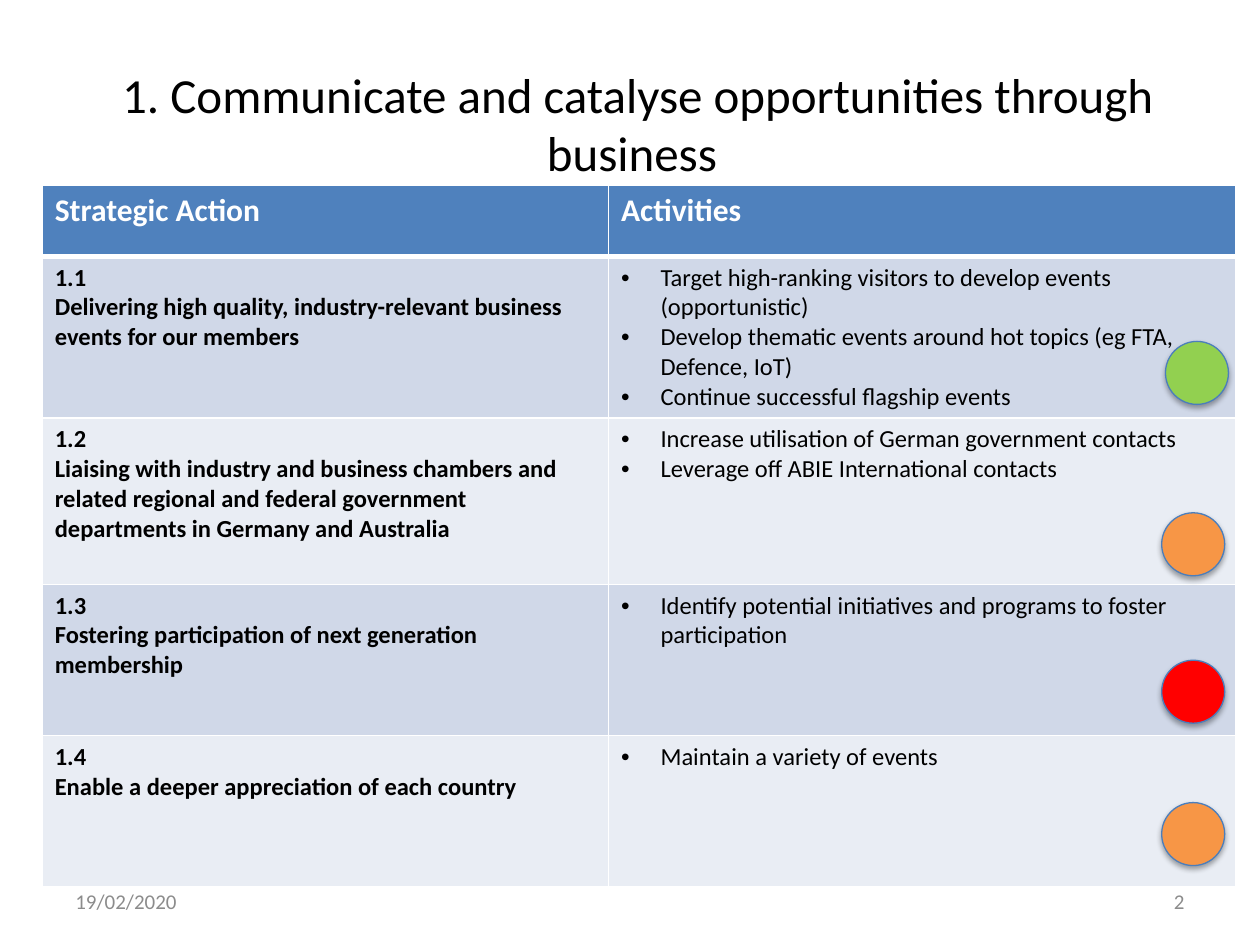
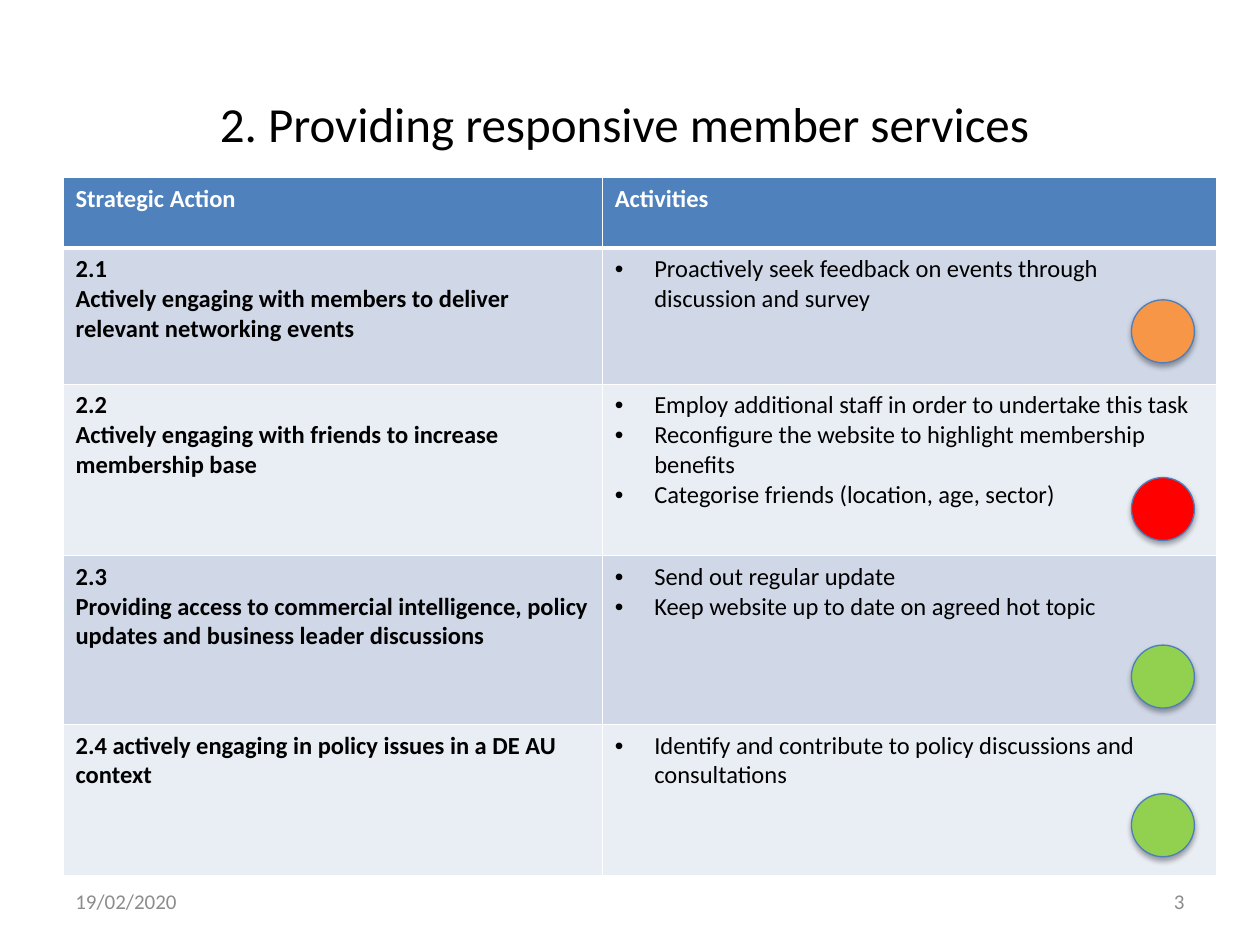
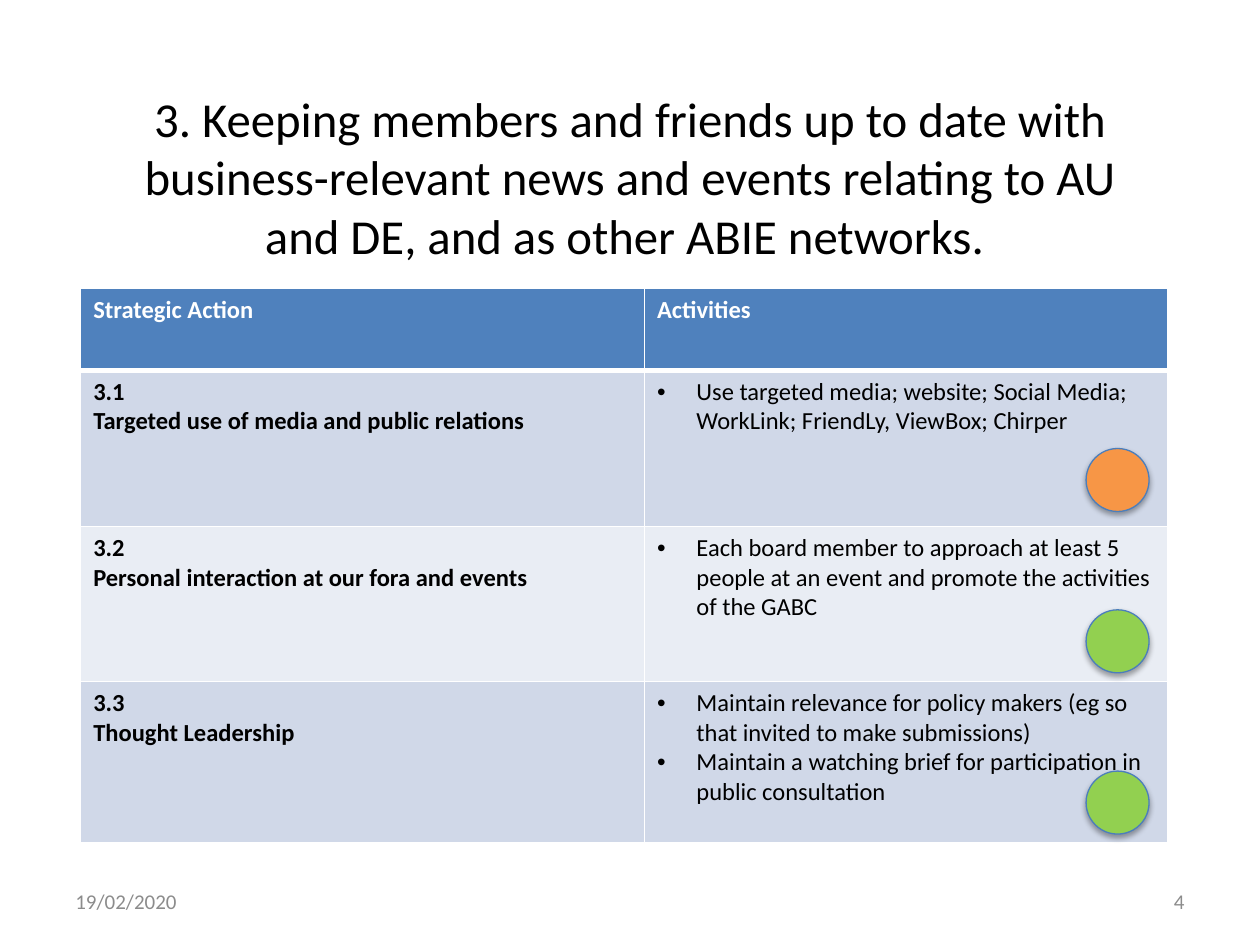
import enum
from dataclasses import dataclass

import pptx
import pptx.dml.color
import pptx.enum.shapes
import pptx.enum.text
import pptx.oxml
import pptx.oxml.ns
import pptx.util

FONT = "Calibri"
BLACK, WHITE, GREY = "000000", "FFFFFF", "8C8C8C"
HEADER_FILL, DOT_LINE = "4F81BD", "4B7EBC"
BANDS = ("D0D8E8", "E9EDF4")
HEADERS = ("Strategic Action", "Activities")
DATE = "19/02/2020"
FIRST_NUMBER = 2
BODY_SIZE = 14
FOOTER_SIZE = 12
DOT_SIZE = 5
INDENT = pptx.util.Pt(22.5)
GRID_COLUMNS, GRID_ROWS = 100, 75
WIDTH, HEIGHT = pptx.util.Inches(10), pptx.util.Inches(7.5)
ALIGN = pptx.enum.text.PP_ALIGN
MIDDLE = pptx.enum.text.MSO_ANCHOR.MIDDLE


class Status(enum.Enum):
    GREEN = "92D050"
    ORANGE = "F79646"
    RED = "FF0000"


@dataclass(frozen=True)
class Box:
    left: float
    top: float
    width: float
    height: float

    def place(self) -> tuple:
        return (grid_x(self.left), grid_y(self.top),
                grid_x(self.width), grid_y(self.height))


@dataclass(frozen=True)
class Action:
    lines: tuple
    activities: tuple
    height: float
    status: Status
    dot_left: float
    dot_top: float


@dataclass(frozen=True)
class Goal:
    title: str
    title_box: Box
    title_size: float
    table_left: float
    table_top: float
    columns: tuple
    header_height: float
    header_size: float
    actions: tuple


DATE_BOX = Box(5, 69.5, 23.3, 4)
NUMBER_BOX = Box(71.7, 69.5, 23.3, 4)

GOALS = (
    Goal(
        "1. Communicate and catalyse opportunities through business ",
        Box(3.5, 3.3, 94.2, 12.9), 28, 3.35, 14.7, (44.95, 49.75), 5.65, 18,
        (
            Action(("1.1", "Delivering high quality, industry-relevant business events for our members"),
                   ("Target high-ranking visitors to develop events (opportunistic)",
                    "Develop thematic events around hot topics (eg FTA, Defence, IoT)",
                    "Continue successful flagship events"),
                   12, Status.GREEN, 92.5, 27.1),
            Action(("1.2", "Liaising with industry and business chambers and related regional and federal "
                    "government departments in Germany and Australia"),
                   ("Increase utilisation of German government contacts",
                    "Leverage off ABIE International contacts"),
                   13.2, Status.ORANGE, 92.2, 40.7),
            Action(("1.3", "Fostering participation of next generation membership"),
                   ("Identify potential initiatives and programs to foster participation",),
                   12, Status.RED, 92.2, 52.4),
            Action(("1.4", "Enable a deeper appreciation of each country"),
                   ("Maintain a variety of events",),
                   12, Status.ORANGE, 92.2, 63.7),
        ),
    ),
    Goal(
        "2. Providing responsive member services ",
        Box(7.5, 3.3, 85, 12.9), 28, 5, 14.1, (42.8, 48.8), 5.6, 14,
        (
            Action(("2.1", "Actively engaging with members to deliver relevant networking events"),
                   ("Proactively seek feedback on events through discussion and survey",),
                   10.8, Status.ORANGE, 89.8, 23.8),
            Action(("2.2", "Actively engaging with friends to increase membership base"),
                   ("Employ additional staff in order to undertake this task",
                    "Reconfigure the website to highlight membership benefits",
                    "Categorise friends (location, age, sector)"),
                   13.6, Status.RED, 89.8, 37.9),
            Action(("2.3", "Providing access to commercial intelligence, policy updates and business "
                    "leader discussions"),
                   ("Send out regular update",
                    "Keep website up to date on agreed hot topic"),
                   13.4, Status.GREEN, 89.8, 51.2),
            Action(("2.4 actively engaging in policy issues in a DE AU context",),
                   ("Identify and contribute to policy discussions and consultations",),
                   12, Status.GREEN, 89.8, 63),
        ),
    ),
    Goal(
        "3. Keeping members and friends up to date with business-relevant news and events "
        "relating to AU and DE, and as other ABIE networks. ",
        Box(7.5, 4.2, 85, 19.6), 27.9, 6.4, 22.9, (44.75, 41.55), 6.5, 14,
        (
            Action(("3.1", "Targeted use of media and public relations"),
                   ("Use targeted media; website; Social Media; WorkLink; FriendLy, ViewBox; Chirper",),
                   12.4, Status.ORANGE, 86.2, 35.6),
            Action(("3.2", "Personal interaction at our fora and events"),
                   ("Each board member to approach at least 5 people at an event and promote the "
                    "activities of the GABC",),
                   12.3, Status.GREEN, 86.2, 48.4),
            Action(("3.3", "Thought Leadership"),
                   ("Maintain relevance for policy makers (eg so that invited to make submissions)",
                    "Maintain a watching brief for participation in public consultation"),
                   12.8, Status.GREEN, 86.2, 61.2),
        ),
    ),
)


def grid_x(columns: float) -> int:
    return round(WIDTH * columns / GRID_COLUMNS)


def grid_y(rows: float) -> int:
    return round(HEIGHT * rows / GRID_ROWS)


def rgb(value: str) -> pptx.dml.color.RGBColor:
    return pptx.dml.color.RGBColor.from_string(value)


def xml(text: str):
    namespace = pptx.oxml.ns.nsdecls("a")
    return pptx.oxml.parse_xml(text.replace(" ", f" {namespace} ", 1))


def write(tf, lines: tuple, size: float, color: str, bold: bool = False,
          align=ALIGN.LEFT, bullets: bool = False) -> None:
    tf.word_wrap = True
    for index, line in enumerate(lines):
        p = tf.add_paragraph() if index else tf.paragraphs[0]
        p.text = line
        p.alignment = align
        if bullets:
            pPr = p._p.get_or_add_pPr()
            pPr.set("marL", str(INDENT))
            pPr.set("indent", str(-INDENT))
            pPr.append(xml('<a:buFont typeface="Arial"/>'))
            pPr.append(xml('<a:buChar char="•"/>'))
        for r in p.runs:
            r.font.name = FONT
            r.font.size = pptx.util.Pt(size)
            r.font.bold = bold
            r.font.color.rgb = rgb(color)


def add_title(slide, goal: Goal) -> None:
    sp = slide.shapes.title
    sp.left, sp.top, sp.width, sp.height = goal.title_box.place()
    tf = sp.text_frame
    tf.auto_size = pptx.enum.text.MSO_AUTO_SIZE.NONE
    tf.vertical_anchor = MIDDLE
    write(tf, (goal.title,), goal.title_size, BLACK, align=ALIGN.CENTER)


def style_cell(cell, fill: str, top: float, bottom: float) -> None:
    tcPr = cell._tc.get_or_add_tcPr()
    for side, width in (("L", 1), ("R", 1), ("T", top), ("B", bottom)):
        tcPr.append(xml(f'<a:ln{side} w="{pptx.util.Pt(width)}"><a:solidFill>'
                        f'<a:srgbClr val="{WHITE}"/></a:solidFill></a:ln{side}>'))
    cell.fill.solid()
    cell.fill.fore_color.rgb = rgb(fill)


def add_goal_table(slide, goal: Goal) -> None:
    heights = (goal.header_height, *(action.height for action in goal.actions))
    box = Box(goal.table_left, goal.table_top, sum(goal.columns), sum(heights))
    table = slide.shapes.add_table(len(heights), len(goal.columns), *box.place()).table
    for column, width in zip(table.columns, goal.columns):
        column.width = grid_x(width)
    for row, height in zip(table.rows, heights):
        row.height = grid_y(height)
    for index, header in enumerate(HEADERS):
        cell = table.cell(0, index)
        style_cell(cell, HEADER_FILL, 1, 3)
        write(cell.text_frame, (header,), goal.header_size, WHITE, bold=True)
    for index, action in enumerate(goal.actions):
        name, activities = table.rows[index + 1].cells
        for cell in (name, activities):
            style_cell(cell, BANDS[index % 2], 1 if index else 3, 1)
        write(name.text_frame, action.lines, BODY_SIZE, BLACK, bold=True)
        write(activities.text_frame, action.activities, BODY_SIZE, BLACK, bullets=True)


def add_footer(slide, box: Box, text: str, align) -> None:
    tf = slide.shapes.add_textbox(*box.place()).text_frame
    tf.vertical_anchor = MIDDLE
    write(tf, (text,), FOOTER_SIZE, GREY, align=align)


def add_status_dot(slide, action: Action) -> None:
    box = Box(action.dot_left, action.dot_top, DOT_SIZE, DOT_SIZE)
    sp = slide.shapes.add_shape(
        pptx.enum.shapes.MSO_SHAPE.FLOWCHART_CONNECTOR, *box.place())
    sp.fill.solid()
    sp.fill.fore_color.rgb = rgb(action.status.value)
    sp.line.color.rgb = rgb(DOT_LINE)
    sp.line.width = pptx.util.Pt(0.75)
    sp.shadow.inherit = False
    effects = sp._element.spPr.find(pptx.oxml.ns.qn("a:effectLst"))
    effects.append(xml('<a:outerShdw blurRad="40000" dist="23000" dir="5400000" rotWithShape="0">'
                       f'<a:srgbClr val="{BLACK}"><a:alpha val="35000"/></a:srgbClr>'
                       '</a:outerShdw>'))


def add_goal_slide(prs, goal: Goal, number: int) -> None:
    slide = prs.slides.add_slide(prs.slide_layouts.get_by_name("Title Only"))
    add_title(slide, goal)
    add_goal_table(slide, goal)
    add_footer(slide, DATE_BOX, DATE, ALIGN.LEFT)
    add_footer(slide, NUMBER_BOX, str(number), ALIGN.RIGHT)
    for action in goal.actions:
        add_status_dot(slide, action)


def main() -> None:
    prs = pptx.Presentation()
    prs.slide_width, prs.slide_height = WIDTH, HEIGHT
    for number, goal in enumerate(GOALS, start=FIRST_NUMBER):
        add_goal_slide(prs, goal, number)
    prs.save("out.pptx")


if __name__ == "__main__":
    main()
